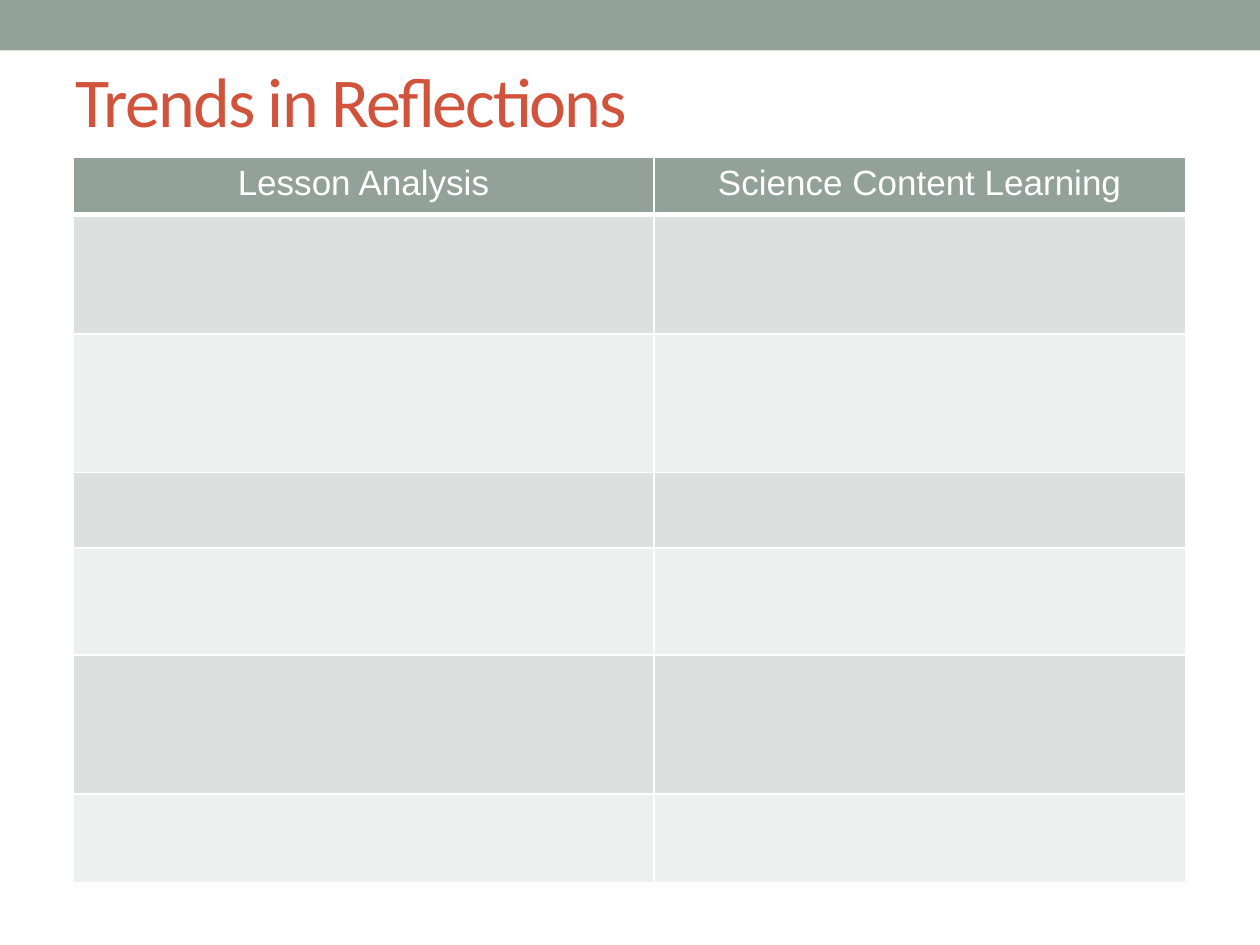
from lxml.etree import SubElement
from pptx import Presentation
from pptx.dml.color import RGBColor
from pptx.enum.shapes import MSO_SHAPE
from pptx.enum.text import MSO_ANCHOR, PP_ALIGN
from pptx.oxml import parse_xml
from pptx.oxml.ns import nsdecls
from pptx.util import Inches, Pt

TITLE = "Trends in Reflections"
HEADERS = ["Lesson Analysis", "Science Content Learning"]
COL_WIDTHS = [4.61, 4.22]
ROW_HEIGHTS = [0.45, 0.95, 1.1, 0.6, 0.85, 1.1, 0.71]
SAGE, RUST, WHITE = "93A299", "D2533C", "FFFFFF"
BANDS = ["EEF0EF", "DCE0DE"]


def paint(target, color):
    """Give a shape or cell a solid fill."""
    target.fill.solid()
    target.fill.fore_color.rgb = RGBColor.from_string(color)


def write(tf, text, size, font, color, align=PP_ALIGN.LEFT, spacing=None):
    """Write one formatted line into a text frame."""
    p = tf.paragraphs[0]
    p.alignment = align
    r = p.add_run()
    r.text = text
    r.font.size = Pt(size)
    r.font.name = font
    r.font.color.rgb = RGBColor.from_string(color)
    if spacing is not None:
        r.font._element.set("spc", str(int(spacing * 100)))


def add_borders(cell, color, bottom):
    """Draw 1 pt cell borders with a chosen bottom width."""
    tc_pr = cell._tc.get_or_add_tcPr()
    widths = {"lnL": 1, "lnR": 1, "lnT": 1, "lnB": bottom}
    for i, (side, width) in enumerate(widths.items()):
        ln = parse_xml(
            f'<a:{side} {nsdecls("a")} w="{Pt(width)}"><a:solidFill>'
            f'<a:srgbClr val="{color}"/></a:solidFill></a:{side}>'
        )
        tc_pr.insert(i, ln)


def add_band(slide, width):
    """Add the coloured band along the top."""
    sp = slide.shapes.add_shape(MSO_SHAPE.RECTANGLE, 0, 0, width, Inches(0.4))
    sp.shadow.inherit = False
    paint(sp, SAGE)
    sp.line.fill.background()


def add_title(slide):
    """Add the slide title."""
    sp = slide.shapes.add_textbox(Inches(0.5), Inches(0.33), Inches(9), Inches(0.92))
    tf = sp.text_frame
    tf.word_wrap = True
    tf.vertical_anchor = MSO_ANCHOR.MIDDLE
    write(tf, TITLE, 40, "Calibri", RUST, spacing=-1)


def add_trends_table(slide):
    """Add the banded table with its header row."""
    table = slide.shapes.add_table(
        len(ROW_HEIGHTS), len(COL_WIDTHS), Inches(0.58), Inches(1.25),
        Inches(sum(COL_WIDTHS)), Inches(sum(ROW_HEIGHTS)),
    ).table
    for col, width in zip(table.columns, COL_WIDTHS):
        col.width = Inches(width)
    for i, (row, height) in enumerate(zip(table.rows, ROW_HEIGHTS)):
        row.height = Inches(height)
        for cell, header in zip(row.cells, HEADERS):
            paint(cell, BANDS[i % 2] if i else SAGE)
            add_borders(cell, WHITE, 1 if i else 3)
            if i == 0:
                write(cell.text_frame, header, 20, "Arial", WHITE, PP_ALIGN.CENTER)


def main():
    """Build and save the slide."""
    prs = Presentation()
    prs.slide_width, prs.slide_height = Inches(10), Inches(7.5)
    slide = prs.slides.add_slide(prs.slide_layouts[6])
    add_band(slide, prs.slide_width)
    add_title(slide)
    add_trends_table(slide)
    prs.save("out.pptx")


if __name__ == "__main__":
    main()
